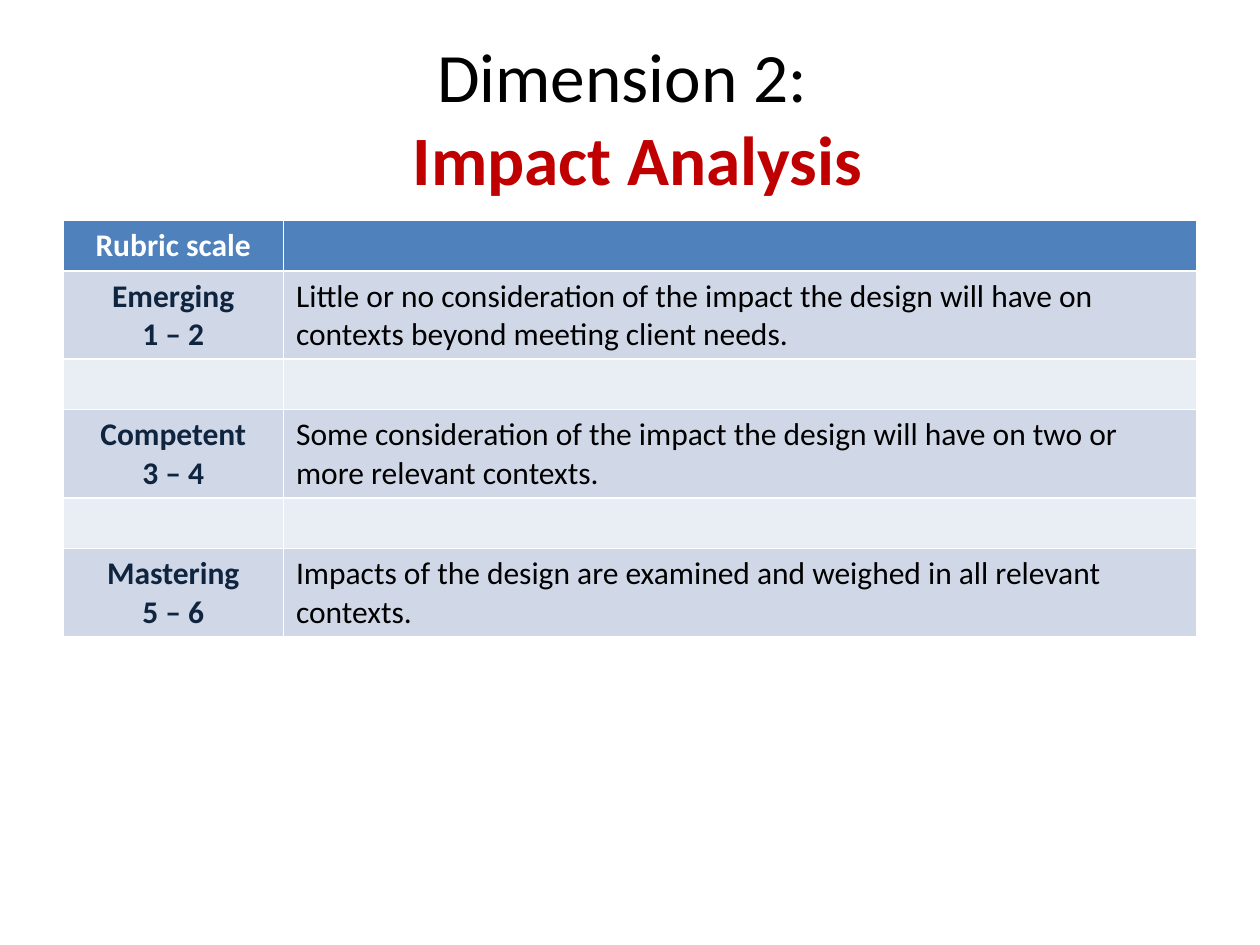
from pptx import Presentation
from pptx.dml.color import RGBColor
from pptx.enum.text import MSO_ANCHOR as Anchor, PP_ALIGN as Align
from pptx.util import Inches, Pt

WHITE = RGBColor(0xFF, 0xFF, 0xFF)
BLACK = RGBColor(0x00, 0x00, 0x00)
RED = RGBColor(0xC0, 0x00, 0x00)
NAVY = RGBColor(0x0F, 0x24, 0x3E)
HEADER_BLUE = RGBColor(0x4F, 0x81, 0xBD)
BAND_DARK = RGBColor(0xD0, 0xD8, 0xE8)
BAND_LIGHT = RGBColor(0xE9, 0xED, 0xF4)

FONT = "Calibri"
SLIDE_W, SLIDE_H = Inches(10), Inches(7.5)
MARGIN = SLIDE_W * 0.05
LINE_ROW, LEVEL_ROW = Inches(0.4), Inches(0.7)
LABEL_COLUMN = Inches(1.75)

HEADING = ("Rubric scale", "")
SPACER = ("", "")
RUBRIC = [
    HEADING,
    ("Emerging\n1 – 2", "Little or no consideration of the impact the design will "
     "have on contexts beyond meeting client needs."),
    SPACER,
    ("Competent\n3 – 4", "Some consideration of the impact the design will have on "
     "two or more relevant contexts."),
    SPACER,
    ("Mastering\n5 – 6", "Impacts of the design are examined and weighed in all "
     "relevant contexts."),
]


def set_font(font, size, color, bold):
    values = {"name": FONT, "size": Pt(size), "bold": bold}
    for attribute, value in values.items():
        setattr(font, attribute, value)
    font.color.rgb = color


def add_title(slide, left, top, width, height):
    frame = slide.shapes.add_textbox(left, top, width, height).text_frame
    frame.word_wrap = True
    frame.vertical_anchor = Anchor.MIDDLE
    title = frame.paragraphs[0]
    title.alignment = Align.CENTER

    dimension = title.add_run()
    dimension.text = "Dimension 2: "
    set_font(dimension.font, 39.6, BLACK, False)
    title.add_line_break()
    topic = title.add_run()
    topic.text = " Impact Analysis"
    set_font(topic.font, 39.6, RED, True)


def fill_cell(cell, text, fill, color, bold, align, anchor):
    cell.fill.solid()
    cell.fill.fore_color.rgb = fill
    cell.vertical_anchor = anchor
    cell.text = text
    for paragraph in cell.text_frame.paragraphs:
        paragraph.alignment = align
        set_font(paragraph.font, 18, color, bold)
        for run in paragraph.runs:
            set_font(run.font, 18, color, bold)


def add_rubric(slide, left, top, width):
    """Place the rubric table; its row heights follow from its content."""
    heights = [LINE_ROW if row in (HEADING, SPACER) else LEVEL_ROW for row in RUBRIC]
    table = slide.shapes.add_table(
        len(RUBRIC), 2, left, top, width, sum(heights)).table
    table.columns[0].width = LABEL_COLUMN
    table.columns[1].width = width - LABEL_COLUMN

    for index, (label, description) in enumerate(RUBRIC):
        table.rows[index].height = heights[index]
        is_header = index == 0
        if is_header:
            fill, label_color = HEADER_BLUE, WHITE
        else:
            fill, label_color = (BAND_DARK if index % 2 else BAND_LIGHT), NAVY
        fill_cell(table.cell(index, 0), label, fill, label_color, True,
                  Align.CENTER, Anchor.TOP if is_header else Anchor.MIDDLE)
        fill_cell(table.cell(index, 1), description, fill, BLACK, False,
                  Align.LEFT, Anchor.TOP)


def main():
    deck = Presentation()
    deck.slide_width, deck.slide_height = SLIDE_W, SLIDE_H
    slide = deck.slides.add_slide(deck.slide_layouts[6])
    content_width = int(SLIDE_W - 2 * MARGIN)
    add_title(slide, int(MARGIN), Inches(0.3), content_width, Inches(1.25))
    add_rubric(slide, int(MARGIN), Inches(1.75), content_width)
    deck.save("out.pptx")


if __name__ == "__main__":
    main()
